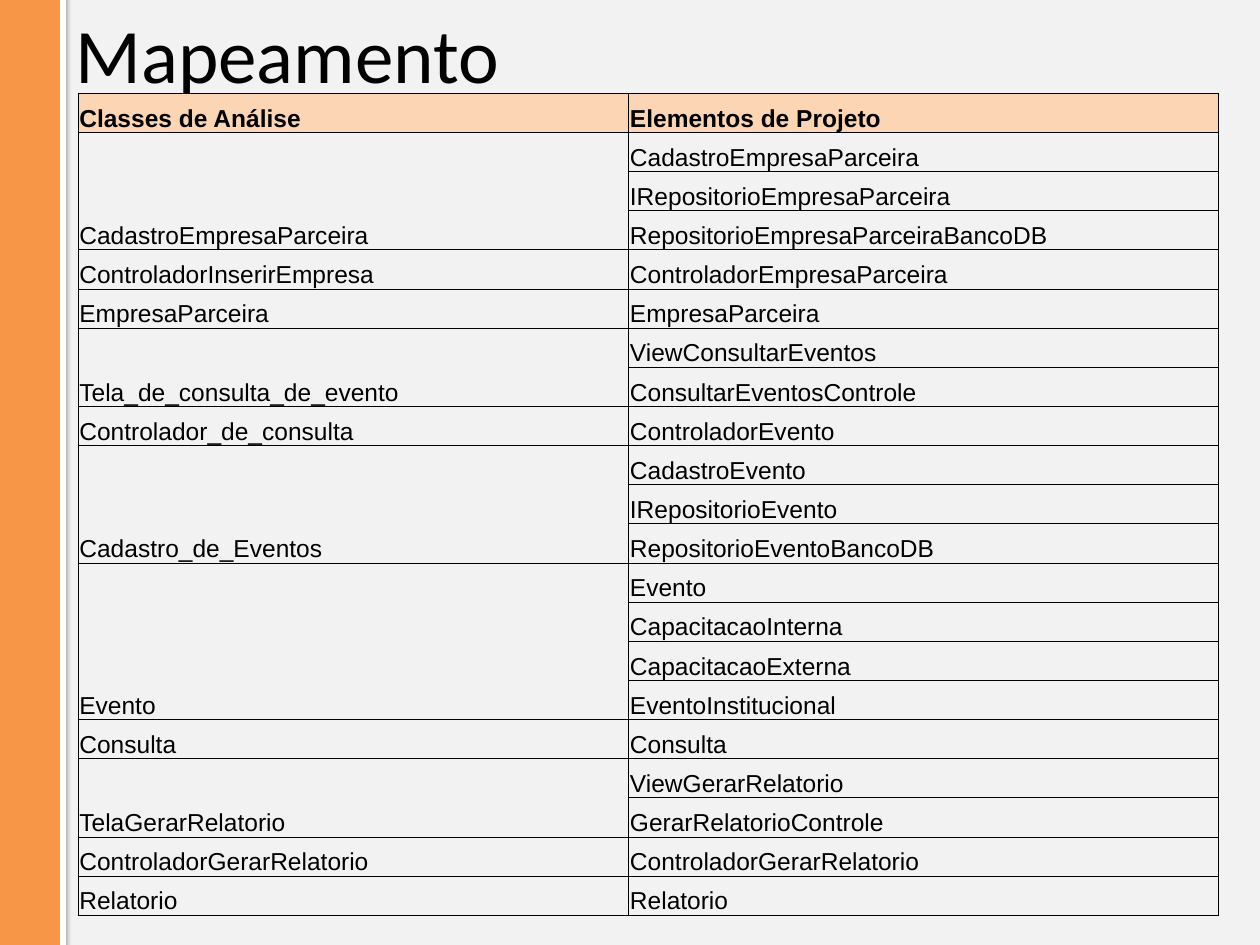
from lxml import etree
from pptx import Presentation
from pptx import util as u
from pptx.dml.color import RGBColor
from pptx.enum import shapes, text
from pptx.oxml import parse_xml
from pptx.oxml.ns import nsdecls, qn

COLORS = {"back": "F2F2F2", "bar": "F79646", "edge": "FFFFFF",
          "ink": "000000", "head": "FCD5B5"}
HEADS = ("Classes de Análise", "Elementos de Projeto")
MAPPING = [
    ("CadastroEmpresaParceira", ["CadastroEmpresaParceira", "IRepositorioEmpresaParceira",
                                 "RepositorioEmpresaParceiraBancoDB"]),
    ("ControladorInserirEmpresa", ["ControladorEmpresaParceira"]),
    ("EmpresaParceira", ["EmpresaParceira"]),
    ("Tela_de_consulta_de_evento", ["ViewConsultarEventos", "ConsultarEventosControle"]),
    ("Controlador_de_consulta", ["ControladorEvento"]),
    ("Cadastro_de_Eventos", ["CadastroEvento", "IRepositorioEvento",
                             "RepositorioEventoBancoDB"]),
    ("Evento", ["Evento", "CapacitacaoInterna", "CapacitacaoExterna",
                "EventoInstitucional"]),
    ("Consulta", ["Consulta"]),
    ("TelaGerarRelatorio", ["ViewGerarRelatorio", "GerarRelatorioControle"]),
    ("ControladorGerarRelatorio", ["ControladorGerarRelatorio"]),
    ("Relatorio", ["Relatorio"]),
]


def rgb(name):
    return RGBColor.from_string(COLORS[name])


def place(shape, left, top, width, height):
    shape.left, shape.top = u.Inches(left), u.Inches(top)
    shape.width, shape.height = u.Inches(width), u.Inches(height)


class Deck:
    """Holds the style and the current slide."""

    def __init__(self):
        self.prs = Presentation()
        self.prs.slide_width, self.prs.slide_height = u.Inches(10), u.Inches(7.5)
        self.slide = self.prs.slides.add_slide(self.prs.slide_layouts[5])
        fill = self.slide.background.fill
        fill.solid()
        fill.fore_color.rgb = rgb("back")

    def style(self, para, font, size, bold=False):
        para.alignment = text.PP_ALIGN.LEFT
        para.font.name, para.font.size = font, u.Pt(size)
        para.font.bold = bold
        para.font.color.rgb = rgb("ink")

    def bar(self, *box):
        """Side bar with a soft shadow, behind everything else."""
        bar = self.slide.shapes.add_shape(
            shapes.MSO_SHAPE.RECTANGLE, *map(u.Inches, box))
        bar.fill.solid()
        bar.fill.fore_color.rgb = rgb("bar")
        bar.line.color.rgb = rgb("edge")
        bar.line.width = u.Pt(3)
        bar.shadow.inherit = False
        glow = bar._element.spPr.find(qn("a:effectLst"))
        glow.append(parse_xml(
            f'<a:outerShdw {nsdecls("a")} blurRad="{u.Pt(3.1)}" dist="{u.Pt(1.6)}" '
            f'dir="5400000" rotWithShape="0"><a:srgbClr val="{COLORS["ink"]}">'
            '<a:alpha val="38000"/></a:srgbClr></a:outerShdw>'))
        self.slide.shapes._spTree.insert(2, bar._element)

    def title(self, words, *box):
        title = self.slide.shapes.title
        place(title, *box)
        title.text_frame.text = words
        title.text_frame.vertical_anchor = text.MSO_ANCHOR.MIDDLE
        self.style(title.text_frame.paragraphs[0], "Calibri", 44)

    def cell(self, cell, words, head=False):
        cell.text = words
        cell.vertical_anchor = text.MSO_ANCHOR.BOTTOM
        cell.margin_left = cell.margin_right = cell.margin_top = u.Inches(0.01)
        cell.margin_bottom = 0
        self.style(cell.text_frame.paragraphs[0], "Arial", 14, head)
        props = cell._tc.get_or_add_tcPr()
        for side in "LRTB":
            line = etree.SubElement(props, qn(f"a:ln{side}"), w=str(u.Pt(0.5)))
            fill = etree.SubElement(line, qn("a:solidFill"))
            etree.SubElement(fill, qn("a:srgbClr"), val=COLORS["ink"])
        if head:
            cell.fill.solid()
            cell.fill.fore_color.rgb = rgb("head")
        else:
            cell.fill.background()

    def table(self, heads, groups, widths, *box):
        """Each group is a left cell spanning its list of right cells."""
        count = 1 + sum(len(items) for _, items in groups)
        grid = self.slide.shapes.add_table(
            count, len(heads), *map(u.Inches, box)).table
        grid.horz_banding = False
        for col, width in zip(grid.columns, widths):
            col.width = u.Inches(width)
        for col, words in enumerate(heads):
            self.cell(grid.cell(0, col), words, head=True)
        row = 1
        for name, items in groups:
            for step, item in enumerate(items):
                self.cell(grid.cell(row + step, 0), "" if step else name)
                self.cell(grid.cell(row + step, 1), item)
            last = row + len(items) - 1
            if last > row:
                grid.cell(row, 0).merge(grid.cell(last, 0))
            row = last + 1


def main():
    deck = Deck()
    deck.bar(-0.14, -0.08, 0.64, 7.69)
    deck.title("Mapeamento", 0.5, -0.21, 9, 1.25)
    deck.table(HEADS, MAPPING, (4.37, 4.68), 0.62, 0.74, 9.05, 6.53)
    deck.prs.save("out.pptx")


if __name__ == "__main__":
    main()
